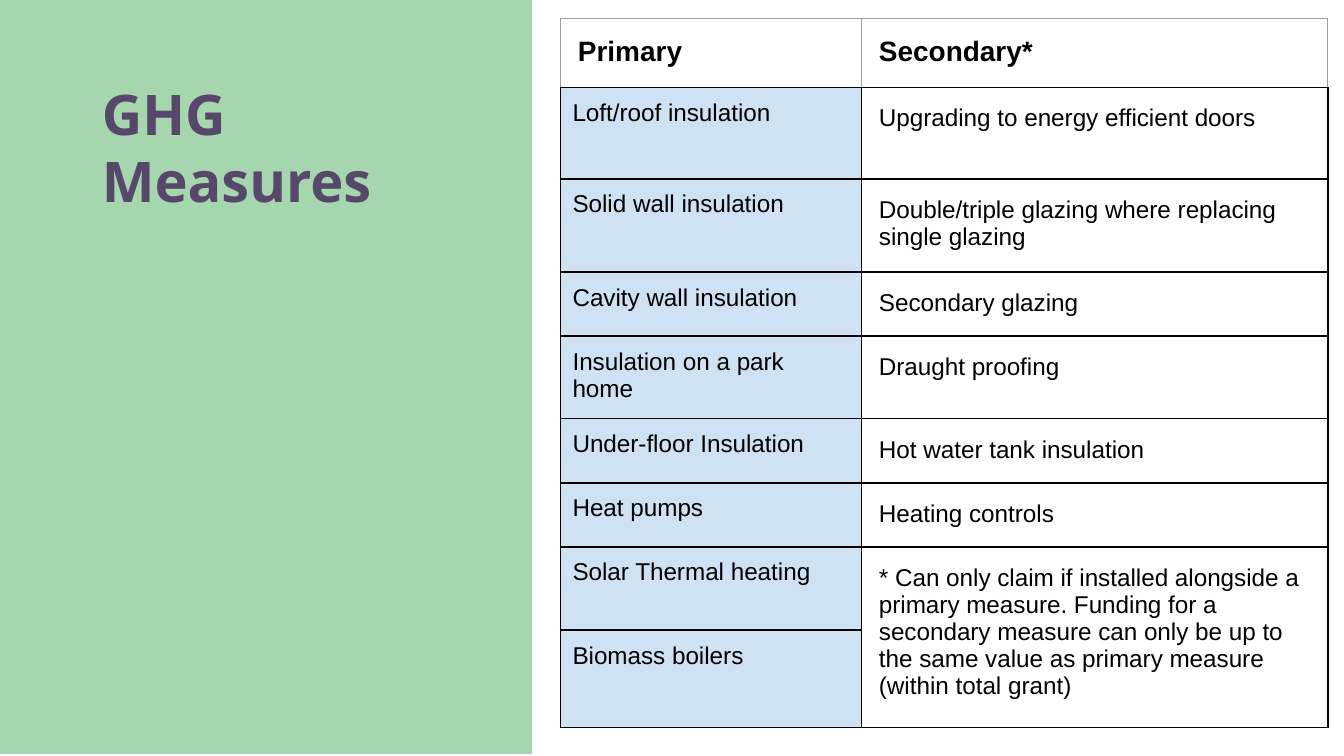
from lxml.etree import SubElement
from pptx import Presentation
from pptx.dml.color import RGBColor
from pptx.enum.shapes import MSO_SHAPE as Shape
from pptx.enum.text import MSO_ANCHOR as Anchor, PP_ALIGN as Align
from pptx.oxml.ns import qn
from pptx.util import Inches, Pt

# Content
TITLE = ["GHG", "Measures"]
HEADER = ("Primary", "Secondary*")
MEASURES = [
    ("Loft/roof insulation", "Upgrading to energy efficient doors"),
    ("Solid wall insulation", "Double/triple glazing where replacing single glazing"),
    ("Cavity wall insulation", "Secondary glazing"),
    ("Insulation on a park home", "Draught proofing"),
    ("Under-floor Insulation", "Hot water tank insulation"),
    ("Heat pumps", "Heating controls"),
    ("Solar Thermal heating",
     "* Can only claim if installed alongside a primary measure. Funding for a "
     "secondary measure can only be up to the same value as primary measure "
     "(within total grant)"),
    ("Biomass boilers", None),
]

# Layout: slide in points (16:9), the rest in inches
SLIDE_WIDTH, SLIDE_HEIGHT = Pt(720), Pt(405)
PANEL = (0, -0.01, 3.96, 5.62)
TITLE_BOX = (0.66, 0.49, 2.84, 1.22)
TABLE_LEFT, TABLE_TOP, TABLE_HEIGHT = 4.17, 0.14, 5.31
COLUMNS = [2.24, 3.47]
ROWS = [0.5, 0.68, 0.68, 0.47, 0.53, 0.47, 0.47, 0.62, 0.67]
NOTE_ROW = 7

# Formats
GREEN, PURPLE, BLUE, BLACK, GREY = "A6D6AE", "57486B", "CFE2F3", "000000", "9E9E9E"
TITLE_FONT = {"name": "Open Sans", "size": Pt(30), "bold": True}
HEADER_FONT = {"name": "Arial", "size": Pt(15), "bold": True}
BODY_FONT = {"name": "Arial", "size": Pt(13), "bold": False}
MARGINS = ("margin_left", "margin_top", "margin_right", "margin_bottom")


def color(value):
    return RGBColor.from_string(value)


def set_margins(target, inches):
    for side in MARGINS:
        setattr(target, side, Inches(inches))


def write(paragraph, text, font_format, font_color):
    paragraph.alignment = Align.LEFT
    run = paragraph.add_run()
    run.text = text
    for name, value in font_format.items():
        setattr(run.font, name, value)
    run.font.color.rgb = color(font_color)


def set_borders(cell, is_header):
    properties = cell._tc.get_or_add_tcPr()
    for position, side in enumerate(("lnL", "lnR", "lnT", "lnB")):
        grey = is_header and side != "lnB"
        line = properties.makeelement(qn(f"a:{side}"), {"w": str(Pt(0.75 if grey else 1))})
        fill = SubElement(line, qn("a:solidFill"))
        SubElement(fill, qn("a:srgbClr"), val=GREY if grey else BLACK)
        properties.insert(position, line)


presentation = Presentation()
presentation.slide_width, presentation.slide_height = SLIDE_WIDTH, SLIDE_HEIGHT
slide = presentation.slides.add_slide(presentation.slide_layouts[6])

# Green side panel
panel = slide.shapes.add_shape(Shape.RECTANGLE, *map(Inches, PANEL))
panel.shadow.inherit = False
panel.fill.solid()
panel.fill.fore_color.rgb = color(GREEN)
panel.line.fill.background()

# Title
title = slide.shapes.add_textbox(*map(Inches, TITLE_BOX))
frame = title.text_frame
frame.word_wrap = True
set_margins(frame, 0.1)
for index, text in enumerate(TITLE):
    paragraph = frame.add_paragraph() if index else frame.paragraphs[0]
    write(paragraph, text, TITLE_FONT, PURPLE)

# Table of measures
table_frame = slide.shapes.add_table(
    len(ROWS), len(COLUMNS), Inches(TABLE_LEFT), Inches(TABLE_TOP),
    Inches(sum(COLUMNS)), Inches(TABLE_HEIGHT))
table = table_frame.table
table.first_row = table.horz_banding = False
for column, width in zip(table.columns, COLUMNS):
    column.width = Inches(width)
for row, height in zip(table.rows, ROWS):
    row.height = Inches(height)
table_frame.height = Inches(TABLE_HEIGHT)
table.cell(NOTE_ROW, 1).merge(table.cell(NOTE_ROW + 1, 1))

for row_index, texts in enumerate([HEADER, *MEASURES]):
    is_header = row_index == 0
    for column_index, text in enumerate(texts):
        cell = table.cell(row_index, column_index)
        is_primary = column_index == 0 and not is_header
        cell.vertical_anchor = Anchor.TOP
        set_margins(cell, 0.09 if is_primary else 0.13)
        if is_primary:
            cell.fill.solid()
            cell.fill.fore_color.rgb = color(BLUE)
        else:
            cell.fill.background()
        set_borders(cell, is_header)
        if text:
            write(cell.text_frame.paragraphs[0], text,
                  HEADER_FONT if is_header else BODY_FONT, BLACK)

presentation.save("out.pptx")
